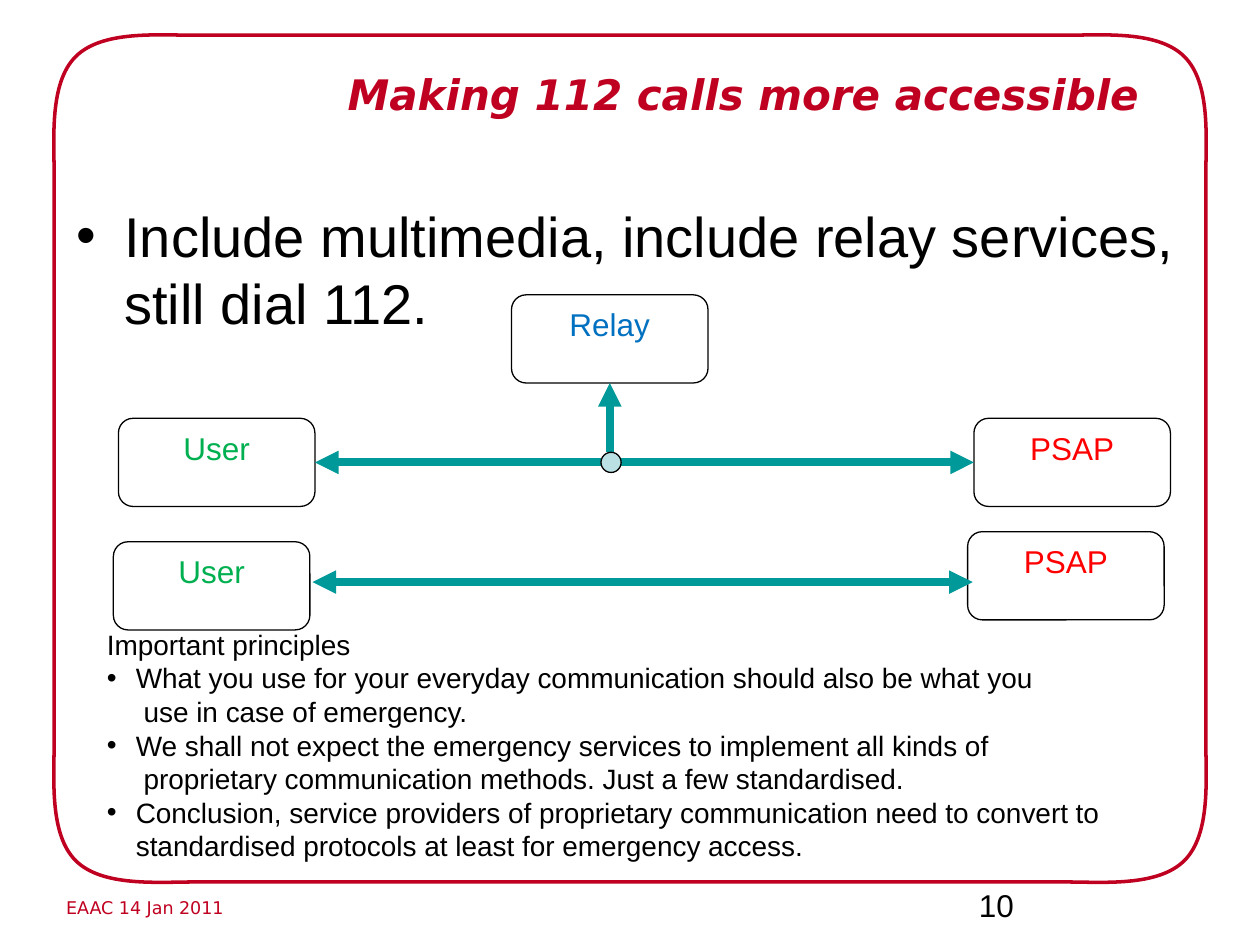
from dataclasses import dataclass
from typing import Optional

from lxml import etree
from pptx import Presentation
from pptx.dml.color import RGBColor
from pptx.enum.shapes import MSO_CONNECTOR, MSO_SHAPE
from pptx.enum.text import MSO_ANCHOR, PP_ALIGN
from pptx.oxml.ns import qn
from pptx.util import Inches, Pt

ROUND, OVAL = MSO_SHAPE.ROUNDED_RECTANGLE, MSO_SHAPE.OVAL
STRAIGHT = MSO_CONNECTOR.STRAIGHT
LEFT, CENTER, RIGHT = PP_ALIGN.LEFT, PP_ALIGN.CENTER, PP_ALIGN.RIGHT
TOP = MSO_ANCHOR.TOP

HEX = {
    "red": "C00020", "white": "FFFFFF", "black": "000000", "teal": "009999",
    "pale": "BBE0E3", "psap": "FF0000", "user": "00B050", "relay": "0070C0",
}
SANS, TITLE = "Arial", "DejaVu Sans"
WIDE, HIGH = 1.56, 0.7


@dataclass
class Node:
    key: str
    text: str
    x: float
    y: float
    hue: str


@dataclass
class Link:
    start: tuple
    end: tuple
    heads: tuple
    source: Optional[tuple] = None
    target: Optional[tuple] = None


NODES = [
    Node("psap1", "PSAP", 7.73, 3.32, "psap"),
    Node("psap2", "PSAP", 7.68, 4.22, "psap"),
    Node("user2", "User", 0.9, 4.3, "user"),
    Node("user1", "User", 0.94, 3.32, "user"),
    Node("relay", "Relay", 4.06, 2.34, "relay"),
]
LINKS = [
    Link((2.48, 4.62), (7.72, 4.62), ("headEnd", "tailEnd")),
    Link((2.5, 3.67), (4.77, 3.67), ("headEnd",), source=("user1", 3)),
    Link((4.84, 3.04), (4.84, 3.59), ("headEnd",), source=("relay", 2)),
    Link((4.92, 3.67), (7.73, 3.67), ("tailEnd",), target=("psap1", 1)),
]
POINTS = [
    "What you use for your everyday communication should also be what you\v"
    " use in case of emergency.",
    "We shall not expect the emergency services to implement all kinds of\v"
    " proprietary communication methods. Just a few standardised.",
    "Conclusion, service providers of proprietary communication need to "
    "convert to standardised protocols at least for emergency access.",
]
CORNER = [(0.43, 1.4), (0.43, 1.1), (0.39, 0.66), (0.6, 0.45),
          (0.81, 0.24), (1.25, 0.28), (1.55, 0.28)]


def color(name: str) -> RGBColor:
    return RGBColor.from_string(HEX[name])


def write(para, text: str, size: float, hue: str = "black", face: str = SANS,
          align=LEFT, bold: bool = False, hang: float = 0) -> None:
    if hang:
        props = para._p.get_or_add_pPr()
        props.set("marL", str(Inches(hang)))
        props.set("indent", str(-Inches(hang)))
        etree.SubElement(props, qn("a:buFont")).set("typeface", SANS)
        etree.SubElement(props, qn("a:buChar")).set("char", "•")
    para.alignment = align
    for i, part in enumerate(text.split("\v")):
        if i:
            para.add_line_break()
        run = para.add_run()
        run.text = part
        font = run.font
        font.name, font.size = face, Pt(size)
        font.bold = font.italic = bold
        font.color.rgb = color(hue)


def box(shapes, x: float, y: float, w: float, h: float, wrap: bool = True):
    frame = shapes.add_textbox(
        Inches(x), Inches(y), Inches(w), Inches(h)).text_frame
    frame.word_wrap = wrap
    return frame


def paint(shape, fill: str, line: str, width: float) -> None:
    shape.shadow.inherit = False
    shape.fill.solid()
    shape.fill.fore_color.rgb = color(fill)
    shape.line.color.rgb = color(line)
    shape.line.width = Pt(width)


def border(shapes) -> None:
    upper = CORNER + [(10 - x, y) for x, y in reversed(CORNER)]
    ring = upper + [(x, 7.28 - y) for x, y in reversed(upper)]
    spots = [(Inches(x), Inches(y)) for x, y in ring]
    pen = shapes.build_freeform(*spots[0])
    pen.add_line_segments(spots[1:], close=True)
    shape = pen.convert_to_shape()
    paint(shape, "white", "red", 2)
    fill = shape.element.spPr.find(qn("a:solidFill"))
    etree.SubElement(fill[0], qn("a:alpha")).set("val", "80000")
    for i, step in enumerate(list(shape.element.iter(qn("a:lnTo"))), 1):
        if i % len(CORNER) in (1, 4):
            curve = etree.Element(qn("a:cubicBezTo"))
            step.addprevious(curve)
        if i % len(CORNER):
            curve.append(step[0])
            step.getparent().remove(step)


def block(shapes, node: Node):
    shape = shapes.add_shape(
        ROUND, Inches(node.x), Inches(node.y), Inches(WIDE), Inches(HIGH))
    paint(shape, "white", "black", 0.75)
    shape.text_frame.vertical_anchor = TOP
    write(shape.text_frame.paragraphs[0], node.text, 18, node.hue, align=CENTER)
    return shape


def arrow(shapes, link: Link, blocks: dict) -> None:
    ends = [Inches(v) for v in link.start + link.end]
    line = shapes.add_connector(STRAIGHT, *ends)
    if link.source:
        line.begin_connect(blocks[link.source[0]], link.source[1])
    if link.target:
        line.end_connect(blocks[link.target[0]], link.target[1])
    line.line.color.rgb = color("teal")
    line.line.width = Pt(4.5)
    props = line.element.spPr
    for head in link.heads:
        etree.SubElement(props.find(qn("a:ln")), qn(f"a:{head}")).set(
            "type", "triangle")
    etree.SubElement(props, qn("a:effectLst"))


def main() -> None:
    deck = Presentation()
    deck.slide_width, deck.slide_height = Inches(10), Inches(7.5)
    slide = deck.slides.add_slide(deck.slide_layouts[5])
    shapes = slide.shapes

    foot = box(shapes, 0.4, 7.07, 1.5, 0.27, wrap=False)
    write(foot.paragraphs[0], "EAAC 14 Jan 2011", 10, "red", TITLE, CENTER)
    border(shapes)

    title = shapes.title
    title.left, title.top = Inches(2.6), Inches(0.49)
    title.width, title.height = Inches(6.54), Inches(0.69)
    title.text_frame.vertical_anchor = TOP
    write(title.text_frame.paragraphs[0], "Making 112 calls more accessible",
          24, "red", TITLE, RIGHT, bold=True)
    shapes.element.append(title.element)

    page = box(shapes, 7.67, 6.98, 2.33, 0.52)
    write(page.paragraphs[0], "10", 18)

    blocks = {node.key: block(shapes, node) for node in NODES}
    for link in LINKS:
        arrow(shapes, link, blocks)
    dot = shapes.add_shape(
        OVAL, Inches(4.77), Inches(3.59), Inches(0.16), Inches(0.16))
    paint(dot, "pale", "black", 0.75)

    body = box(shapes, 0.51, 1.55, 9, 3.54)
    write(body.paragraphs[0],
          "Include multimedia, include relay services, still dial 112.",
          32, hang=0.38)

    notes = box(shapes, 0.75, 4.93, 8.74, 1.99)
    write(notes.paragraphs[0], "Important principles", 16)
    for point in POINTS:
        write(notes.add_paragraph(), point, 16, hang=0.23)

    deck.save("out.pptx")


if __name__ == "__main__":
    main()
